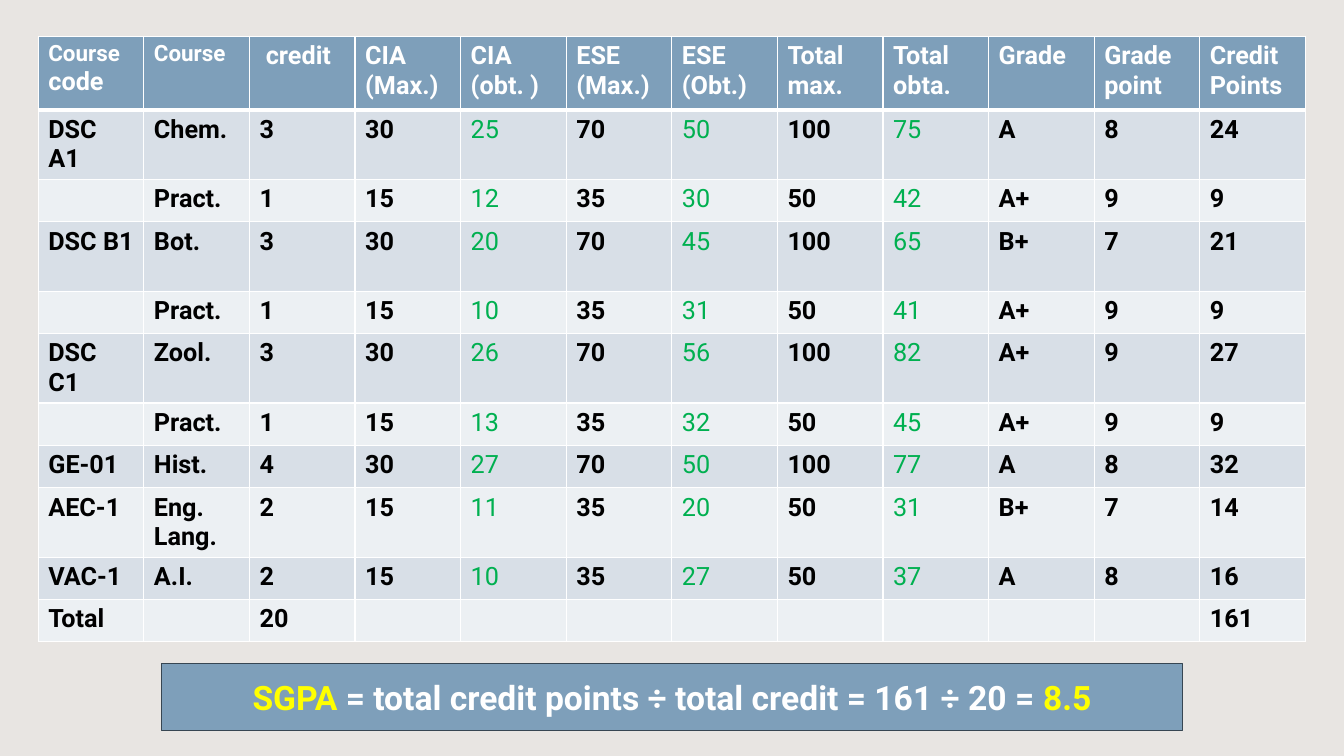
from dataclasses import dataclass

from lxml.etree import SubElement
from pptx import Presentation
from pptx.dml.color import RGBColor
from pptx.enum.shapes import MSO_SHAPE
from pptx.enum.text import MSO_ANCHOR, PP_ALIGN
from pptx.oxml.ns import qn
from pptx.util import Inches, Pt

# Content: a line break in a heading starts a new paragraph
HEADINGS = ["Course code", "Course", " credit", "CIA\n(Max.)", "CIA (obt. )", "ESE\n(Max.)",
            "ESE\n(Obt.)", "Total max.", "Total obta.", "Grade", "Grade point", "Credit Points"]
COURSES = [
    ("DSC A1", "Chem.", 3, 30, 25, 70, 50, 100, 75, "A", 8, 24),
    ("", "Pract.", 1, 15, 12, 35, 30, 50, 42, "A+", 9, 9),
    ("DSC B1", "Bot.", 3, 30, 20, 70, 45, 100, 65, "B+", 7, 21),
    ("", "Pract.", 1, 15, 10, 35, 31, 50, 41, "A+", 9, 9),
    ("DSC C1", "Zool.", 3, 30, 26, 70, 56, 100, 82, "A+", 9, 27),
    ("", "Pract.", 1, 15, 13, 35, 32, 50, 45, "A+", 9, 9),
    ("GE-01", "Hist.", 4, 30, 27, 70, 50, 100, 77, "A", 8, 32),
    ("AEC-1", "Eng. Lang.", 2, 15, 11, 35, 20, 50, 31, "B+", 7, 14),
    ("VAC-1", "A.I.", 2, 15, 10, 35, 27, 50, 37, "A", 8, 16),
]
TOTALS = ("Total", "", 20, "", "", "", "", "", "", "", "", 161)
OBTAINED_COLUMNS = {4, 6, 8}
TALL_COURSES = {"DSC A1", "DSC B1", "DSC C1", "AEC-1"}
FORMULA = [("SGPA", True),
           (" = total credit points ÷ total credit = 161 ÷ 20 = ", False),
           ("8.5", True)]


@dataclass(frozen=True)
class Theme:
    font: str = "Roboto"
    background: str = "E8E5E2"
    accent: str = "7E9FBA"
    outline: str = "374652"
    bands: tuple = ("D8DFE7", "ECF0F3")
    white: str = "FFFFFF"
    text: str = "000000"
    obtained: str = "00B050"
    highlight: str = "FFFF00"
    small_size: int = 16
    body_size: int = 18
    formula_size: int = 24


theme = Theme()

# Layout in inches
SLIDE_W, SLIDE_H = 13.33, 7.5
TABLE_LEFT, TABLE_TOP, TABLE_W = 0.38, 0.36, 12.57
HEADING_H, TALL_H, SHORT_H = 0.73, 0.69, 0.42
FORMULA_W, FORMULA_H, FORMULA_TOP = 10.13, 0.67, 6.58


def add_run(paragraph, text, color, size=theme.body_size, bold=True):
    run = paragraph.add_run()
    run.text = text
    run.font.name = theme.font
    run.font.size = Pt(size)
    run.font.bold = bold
    run.font.color.rgb = RGBColor.from_string(color)


def paint(fill, color):
    fill.solid()
    fill.fore_color.rgb = RGBColor.from_string(color)


def add_borders(cell, top=1, bottom=1):
    properties = cell._tc.get_or_add_tcPr()
    for side, width in (("L", 1), ("R", 1), ("T", top), ("B", bottom)):
        line = SubElement(properties, qn(f"a:ln{side}"), w=str(Pt(width)))
        SubElement(SubElement(line, qn("a:solidFill")), qn("a:srgbClr"), val=theme.white)


def heading_runs(column, text):
    if column == 0:
        first, second = text.split()
        return [(first + " ", theme.small_size), (second, theme.body_size)]
    return [(text, theme.small_size if column == 1 else theme.body_size)]


prs = Presentation()
prs.slide_width, prs.slide_height = Inches(SLIDE_W), Inches(SLIDE_H)
slide = prs.slides.add_slide(prs.slide_layouts[6])
paint(slide.background.fill, theme.background)

# Marks table
body_rows = COURSES + [TOTALS]
row_heights = [HEADING_H] + [TALL_H if row[0] in TALL_COURSES else SHORT_H for row in body_rows]
marks = slide.shapes.add_table(
    len(row_heights), len(HEADINGS), Inches(TABLE_LEFT), Inches(TABLE_TOP),
    Inches(TABLE_W), Inches(sum(row_heights))).table
for column in marks.columns:
    column.width = Inches(TABLE_W / len(HEADINGS))
for row, height in zip(marks.rows, row_heights):
    row.height = Inches(height)

# Heading row
for c, heading in enumerate(HEADINGS):
    cell = marks.cell(0, c)
    add_borders(cell, bottom=3)
    paint(cell.fill, theme.accent)
    for i, line in enumerate(heading.split("\n")):
        paragraph = cell.text_frame.add_paragraph() if i else cell.text_frame.paragraphs[0]
        for text, size in heading_runs(c, line):
            add_run(paragraph, text, theme.white, size)

# Course rows and totals, in alternating bands
for r, values in enumerate(body_rows, start=1):
    for c, value in enumerate(values):
        cell = marks.cell(r, c)
        add_borders(cell, top=3 if r == 1 else 1)
        paint(cell.fill, theme.bands[(r - 1) % 2])
        if value != "":
            obtained = c in OBTAINED_COLUMNS
            add_run(cell.text_frame.paragraphs[0], str(value),
                    theme.obtained if obtained else theme.text, bold=not obtained)

# Formula banner, centred below the table
banner = slide.shapes.add_shape(
    MSO_SHAPE.RECTANGLE, Inches((SLIDE_W - FORMULA_W) / 2), Inches(FORMULA_TOP),
    Inches(FORMULA_W), Inches(FORMULA_H))
banner.shadow.inherit = False
paint(banner.fill, theme.accent)
paint(banner.line.fill, theme.outline)
banner.line.width = Pt(0.85)
banner.text_frame.word_wrap = True
banner.text_frame.vertical_anchor = MSO_ANCHOR.MIDDLE
formula = banner.text_frame.paragraphs[0]
formula.alignment = PP_ALIGN.CENTER
for text, highlighted in FORMULA:
    add_run(formula, text, theme.highlight if highlighted else theme.white, theme.formula_size)

prs.save("out.pptx")
